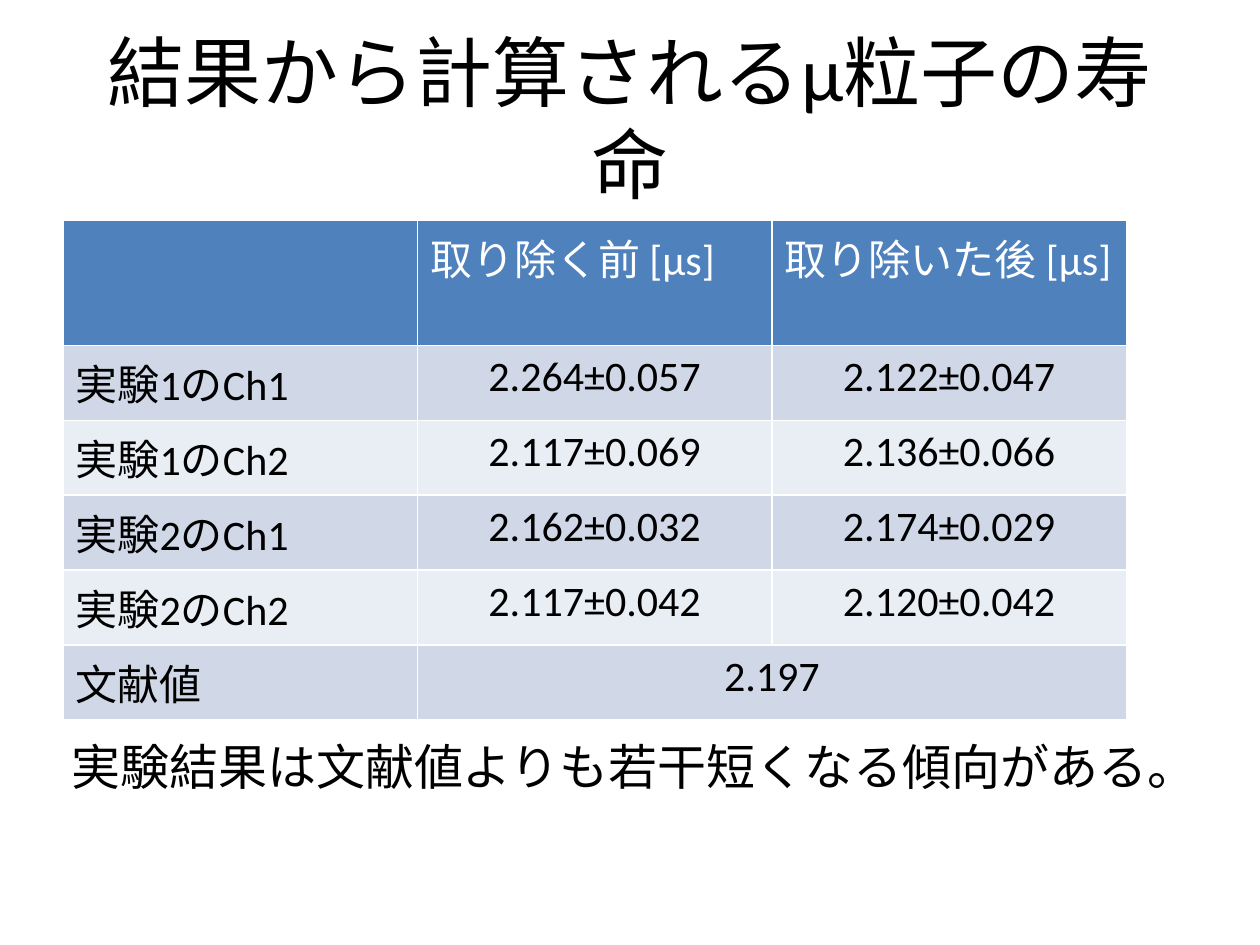
from pptx import Presentation
from pptx.dml.color import RGBColor
from pptx.enum.text import MSO_ANCHOR as Anchor, PP_ALIGN as Align
from pptx.util import Inches, Pt

BLACK = RGBColor(0x00, 0x00, 0x00)
WHITE = RGBColor(0xFF, 0xFF, 0xFF)
HEADER_BLUE = RGBColor(0x4F, 0x81, 0xBD)
BANDS = (RGBColor(0xD0, 0xD8, 0xE8), RGBColor(0xE9, 0xED, 0xF4))

LIFETIMES = [
    ("", "取り除く前 [μs]", "取り除いた後 [μs]"),
    ("実験1のCh1", "2.264±0.057", "2.122±0.047"),
    ("実験1のCh2", "2.117±0.069", "2.136±0.066"),
    ("実験2のCh1", "2.162±0.032", "2.174±0.029"),
    ("実験2のCh2", "2.117±0.042", "2.120±0.042"),
    ("文献値", "2.197", ""),
]


class SlideBuilder:
    font_name = "Calibri"

    def __init__(self, presentation):
        self.width = presentation.slide_width
        self.height = presentation.slide_height
        self.slide = presentation.slides.add_slide(presentation.slide_layouts[5])

    def box(self, left, top, width, height):
        """Turn shares of the slide's size into lengths."""
        return (int(left * self.width), int(top * self.height),
                int(width * self.width), int(height * self.height))

    def add_text(self, text_frame, text, size, color=BLACK, align=Align.LEFT):
        paragraph = text_frame.paragraphs[0]
        paragraph.alignment = align
        run = paragraph.add_run()
        run.text = text
        run.font.color.rgb = color
        values = {"name": self.font_name, "size": Pt(size), "bold": False}
        for name, value in values.items():
            setattr(run.font, name, value)

    def title(self, text, *shares):
        shape = self.slide.shapes.title
        for name, value in zip(("left", "top", "width", "height"), self.box(*shares)):
            setattr(shape, name, value)
        shape.text_frame.vertical_anchor = Anchor.MIDDLE
        self.add_text(shape.text_frame, text, 44, align=Align.CENTER)

    def table(self, rows, *shares):
        # The default table style supplies the white cell borders
        table = self.slide.shapes.add_table(
            len(rows), len(rows[0]), *self.box(*shares)).table
        for i, row in enumerate(rows):
            for j, text in enumerate(row):
                cell = table.cell(i, j)
                cell.fill.solid()
                cell.fill.fore_color.rgb = BANDS[(i - 1) % 2] if i else HEADER_BLUE
                if text:
                    self.add_text(cell.text_frame, text, 24, BLACK if i else WHITE,
                                  Align.CENTER if i and j else Align.LEFT)
        return table

    def note(self, text, *shares):
        text_frame = self.slide.shapes.add_textbox(*self.box(*shares)).text_frame
        text_frame.word_wrap = True
        self.add_text(text_frame, text, 28)


def main():
    presentation = Presentation()
    presentation.slide_width, presentation.slide_height = Inches(10), Inches(7.5)
    builder = SlideBuilder(presentation)

    # Title
    builder.title("結果から計算されるμ粒子の寿命", 0.05, 0.04, 0.9, 1 / 6)

    # Measured lifetimes, with one literature value across both columns
    table = builder.table(LIFETIMES, 0.05, 0.7 / 3, 0.844, 0.476)
    table.cell(5, 1).merge(table.cell(5, 2))

    # Conclusion
    builder.note("実験結果は文献値よりも若干短くなる傾向がある。", 0.047, 5.8 / 7.5, 0.906, 0.076)

    presentation.save("out.pptx")


if __name__ == "__main__":
    main()
